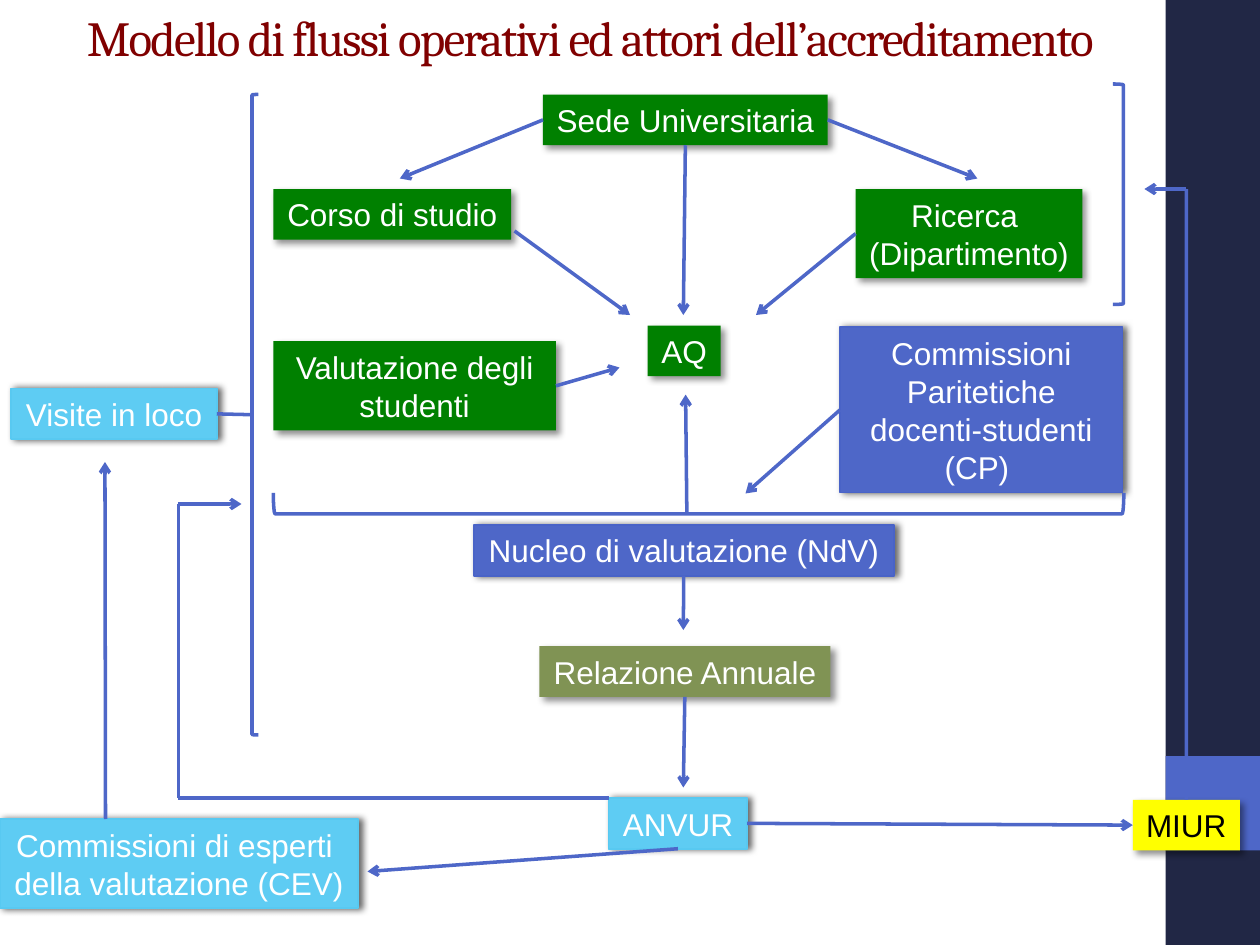
from lxml import etree
from pptx import Presentation
from pptx.dml.color import RGBColor
from pptx.enum.shapes import MSO_CONNECTOR, MSO_SHAPE
from pptx.enum.text import MSO_ANCHOR, MSO_AUTO_SIZE, PP_ALIGN
from pptx.oxml.ns import qn
from pptx.util import Pt

RECT = MSO_SHAPE.RECTANGLE
LEFT_BR, RIGHT_BR = MSO_SHAPE.LEFT_BRACKET, MSO_SHAPE.RIGHT_BRACKET
STRAIGHT = MSO_CONNECTOR.STRAIGHT
MIDDLE = MSO_ANCHOR.MIDDLE
GROW = MSO_AUTO_SIZE.SHAPE_TO_FIT_TEXT
LEFT, CENTER = PP_ALIGN.LEFT, PP_ALIGN.CENTER
TOP, WEST, BOTTOM, EAST = range(4)

COLORS = {
    "navy": "212745", "blue": "4E67C8", "edge": "4963C7",
    "sky": "5ECCF3", "rim": "58C9F1", "green": "008000",
    "olive": "809354", "yellow": "FFFF00", "maroon": "800000",
    "white": "FFFFFF", "black": "000000",
}
RIMS = {"blue": "edge", "sky": "rim"}


def rgb(name):
    return RGBColor.from_string(COLORS[name])


def write(frame, text, size=18, font="Arial", color="white", align=CENTER,
          space=0):
    """Fill a text frame, one paragraph a line."""
    frame.vertical_anchor = MIDDLE
    for i, part in enumerate(text.split("\n")):
        para = frame.add_paragraph() if i else frame.paragraphs[0]
        para.alignment = align
        run = para.add_run()
        run.text = part
        run.font.size = Pt(size)
        run.font.name = font
        run.font.color.rgb = rgb(color)
        if space:
            run.font._element.set("spc", str(space * 100))


class Chart:
    """The slide and the style of its parts."""
    width = 2

    def __init__(self, slide):
        self.slide = slide
        self.shapes = slide.shapes

    def title(self, text, x, y, w, h):
        head = self.shapes.title
        head.left, head.top, head.width, head.height = map(Pt, (x, y, w, h))
        frame = head.text_frame
        frame.auto_size = MSO_AUTO_SIZE.NONE
        write(frame, text, size=28, font="Cambria", color="maroon",
              align=LEFT, space=-1)

    def bar(self, color, x, y, w, h):
        shape = self.shapes.add_shape(RECT, *map(Pt, (x, y, w, h)))
        shape.fill.solid()
        shape.fill.fore_color.rgb = rgb(color)
        shape.line.fill.background()
        shape.shadow.inherit = False
        return shape

    def box(self, text, color, x, y, w, h=29, ink="white", wrap=False):
        shape = self.bar(color, x, y, w, h)
        rim = RIMS.get(color)
        if rim:
            shape.line.color.rgb = rgb(rim)
            shape.line.width = Pt(1)
        self.shade(shape, *((60, 2, 0) if rim else (43, 3, 45)))
        frame = shape.text_frame
        frame.word_wrap = wrap
        frame.auto_size = GROW
        write(frame, text, color=ink)
        return shape

    def shade(self, shape, alpha, dist, angle):
        effects = shape._element.spPr.find(qn("a:effectLst"))
        outer = etree.SubElement(
            effects, qn("a:outerShdw"), blurRad=str(Pt(4)),
            dist=str(Pt(dist)), dir=str(angle * 60000), rotWithShape="0")
        tint = etree.SubElement(outer, qn("a:srgbClr"), val=COLORS["black"])
        etree.SubElement(tint, qn("a:alpha"), val=str(alpha * 1000))

    def bracket(self, kind, x, y, w, h, turn=0):
        shape = self.shapes.add_shape(kind, *map(Pt, (x, y, w, h)))
        shape.rotation = turn
        shape.fill.background()
        shape.line.color.rgb = rgb("blue")
        shape.line.width = Pt(self.width)
        shape.shadow.inherit = False

    def line(self, start, end, arrow=True):
        """Each end is a point (x, y) or a joint (box, side)."""
        joints = [isinstance(p[0], (int, float)) for p in (start, end)]
        a = start if joints[0] else (0, 0)
        b = end if joints[1] else (0, 0)
        link = self.shapes.add_connector(STRAIGHT, *map(Pt, (*a, *b)))
        if not joints[0]:
            link.begin_connect(*start)
        if not joints[1]:
            link.end_connect(*end)
        link.line.color.rgb = rgb("blue")
        link.line.width = Pt(self.width)
        props = link._element.spPr
        if arrow:
            etree.SubElement(props.find(qn("a:ln")), qn("a:tailEnd"),
                             type="arrow")
        etree.SubElement(props, qn("a:effectLst"))

    def route(self, *stops):
        """A bent path with an arrowhead on its last leg."""
        last = len(stops) - 2
        for i, pair in enumerate(zip(stops, stops[1:])):
            self.line(*pair, arrow=i == last)


def main():
    deck = Presentation()
    deck.slide_width, deck.slide_height = Pt(720), Pt(540)
    flow = Chart(deck.slides.add_slide(deck.slide_layouts[5]))

    # Side band and title
    flow.bar("navy", 666, 0, 54, 540)
    flow.bar("blue", 666, 432, 54, 54)
    flow.title("Modello di flussi operativi ed attori dell’accreditamento",
               42.5, -12.2, 648, 66)

    # University actors
    seat = flow.box("Sede Universitaria", "green", 310.3, 54, 162.7)
    flow.box("Corso di studio", "green", 156.2, 108, 136)
    dept = flow.box("Ricerca \n(Dipartimento)", "green", 488.9, 108, 129.6, 51)
    flow.box("AQ", "green", 370, 186, 41.8)
    pupils = flow.box("Valutazione degli studenti", "green",
                      156.2, 195, 161.5, 51, wrap=True)

    # Evaluation bodies
    joint = flow.box("Commissioni Paritetiche docenti-studenti (CP) ", "blue",
                     480, 187, 161.5, 94.5, wrap=True)
    board = flow.box("Nucleo di valutazione (NdV) ", "blue", 270.7, 300, 240)
    report = flow.box("Relazione Annuale", "olive", 308.2, 369.2, 166.3)
    agency = flow.box("ANVUR ", "sky", 347.8, 456, 79.2)
    flow.box("Commissioni di esperti \ndella valutazione (CEV) ", "sky",
             0, 468, 204.5, 51)
    visits = flow.box("Visite in loco", "sky", 6.5, 222, 117.4)
    state = flow.box("MIUR", "yellow", 647.3, 457, 61.2, ink="black")

    # Brackets
    flow.bracket(LEFT_BR, 144, 54, 3.6, 366)
    flow.bracket(RIGHT_BR, 636, 48, 6, 126)
    flow.bracket(LEFT_BR, 393.2, 44.6, 12, 486, turn=270)

    # Flows inside the university
    flow.line((seat, WEST), (228.5, 102))
    flow.line((seat, EAST), (558.5, 102))
    flow.line((seat, BOTTOM), (390.5, 180))
    flow.line((294, 132), (360, 180))
    flow.line((dept, WEST), (432, 180))
    flow.line((pupils, EAST), (354, 210))
    flow.line((joint, WEST), (426, 282))
    flow.line((392.5, 292.5), (391.8, 225.5))

    # Flows between the bodies
    flow.line((board, BOTTOM), (390.5, 360))
    flow.line((report, BOTTOM), (390.5, 450))
    flow.line((agency, EAST), (state, WEST))
    flow.line((agency, BOTTOM), (210, 498))
    flow.line((60.3, 468), (60, 264))
    flow.line((144, 237), (visits, EAST), arrow=False)

    # Feedback paths
    flow.route((347.8, 456), (102, 456), (102, 288), (138, 288))
    flow.route((state, TOP), (678, 108), (654, 108))

    deck.save("out.pptx")


if __name__ == "__main__":
    main()
